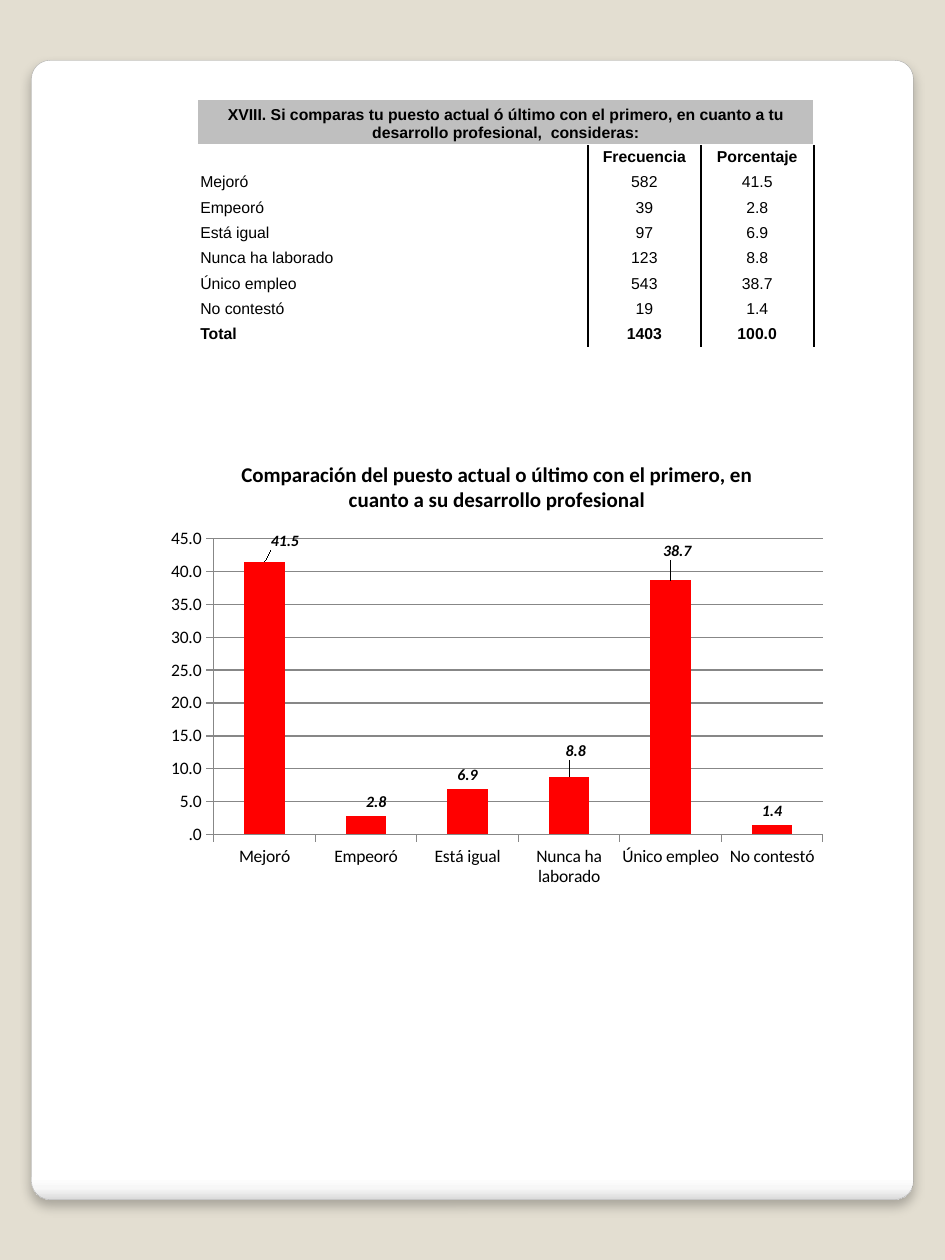
from itertools import accumulate

from lxml import etree
from pptx import Presentation
from pptx.chart.data import CategoryChartData
from pptx.dml.color import RGBColor
from pptx.enum.chart import XL_CHART_TYPE as ChartType, XL_LABEL_POSITION as LabelPos
from pptx.enum.chart import XL_TICK_MARK as Tick
from pptx.enum.shapes import MSO_CONNECTOR as Connector, MSO_SHAPE as Preset
from pptx.enum.text import MSO_ANCHOR as Anchor, PP_ALIGN as Align
from pptx.oxml import parse_xml
from pptx.oxml.ns import nsdecls, qn
from pptx.util import Pt

QUESTION = ("XVIII. Si comparas tu puesto actual ó último con el primero, en cuanto a tu\n"
            "desarrollo profesional,  consideras:")
CHART_TITLE = ("Comparación del puesto actual o último con el primero, "
               "en cuanto a su desarrollo profesional")
ANSWERS = [("Mejoró", 582, 41.5), ("Empeoró", 39, 2.8), ("Está igual", 97, 6.9),
           ("Nunca ha laborado", 123, 8.8), ("Único empleo", 543, 38.7),
           ("No contestó", 19, 1.4)]
TOTAL = ("Total", 1403, 100.0)
# Answer index -> label shift as fractions of the chart's width and height
LABEL_SHIFTS = {0: (0.03, -0.015), 1: (0.015, 0), 3: (0.01, -0.025), 4: (0.01, -0.033)}
NO_LEADER_LINES = (
    f'<c:extLst {nsdecls("c")}><c:ext uri="{{CE6537A1-D6FC-4f65-9D91-7224C49458BB}}" '
    'xmlns:c15="http://schemas.microsoft.com/office/drawing/2012/chart">'
    '<c15:showLeaderLines val="0"/></c:ext></c:extLst>')


def rgb(color):
    return RGBColor.from_string(color)


def manual_layout(inner=False, **fractions):
    """Return a c:layout element; x and y are edges when inner, else shifts."""
    layout = etree.Element(qn("c:layout"))
    manual = etree.SubElement(layout, qn("c:manualLayout"))
    if inner:
        settings = {"layoutTarget": "inner", "xMode": "edge", "yMode": "edge", **fractions}
    else:
        settings = fractions
    for tag, value in settings.items():
        etree.SubElement(manual, qn(f"c:{tag}")).set("val", str(value))
    return layout


class Page:
    ink, paper, bar, grid = "000000", "E3DED1", "FF0000", "878787"
    heading_fill = "BFBFBF"
    table_font, chart_font = "Arial", "Calibri"

    def __init__(self, slide):
        self.slide = slide
        slide.background.fill.solid()
        slide.background.fill.fore_color.rgb = rgb(self.paper)

    def style(self, font, name, size, bold=False, italic=False):
        font.name, font.size, font.bold, font.italic = name, Pt(size), bold, italic
        font.color.rgb = rgb(self.ink)

    def panel(self, left, top, width, height):
        card = self.slide.shapes.add_shape(
            Preset.ROUNDED_RECTANGLE, Pt(left), Pt(top), Pt(width), Pt(height))
        card.adjustments[0] = 0.021
        card.line.color.rgb = rgb("A4A4A4")
        card.line.width = Pt(0.16)
        stops = "".join(
            f'<a:gs pos="{percent * 1000}"><a:srgbClr val="{color}"/></a:gs>'
            for percent, color in [(0, "FFFFFF"), (98, "FFFFFF"), (99, "F7F7F7"), (100, "DADADA")])
        line = card.line._ln
        line.addprevious(parse_xml(
            f'<a:gradFill {nsdecls("a")} rotWithShape="1"><a:gsLst>{stops}</a:gsLst>'
            '<a:lin ang="5400000" scaled="0"/></a:gradFill>'))
        line.addnext(parse_xml(
            f'<a:effectLst {nsdecls("a")}><a:outerShdw blurRad="{Pt(6)}" dist="{Pt(4)}" '
            'dir="5400000" algn="t" rotWithShape="0"><a:srgbClr val="000000">'
            '<a:alpha val="25000"/></a:srgbClr></a:outerShdw></a:effectLst>'))

    def vertical_rule(self, x, top, bottom):
        rule = self.slide.shapes.add_connector(
            Connector.STRAIGHT, Pt(x), Pt(top), Pt(x), Pt(bottom))
        rule.line.color.rgb = rgb(self.ink)
        rule.line.width = Pt(1)
        etree.SubElement(rule._element.spPr, qn("a:effectLst"))

    def cell(self, cell, text, align=Align.CENTER, bold=False, fill=None, margin_top=0):
        cell.margin_left = cell.margin_right = Pt(1.5)
        cell.margin_top, cell.margin_bottom = Pt(margin_top), 0
        cell.vertical_anchor = Anchor.MIDDLE
        cell.text = text
        for paragraph in cell.text_frame.paragraphs:
            paragraph.alignment = align
            self.style(paragraph.font, self.table_font, 9, bold)
            if not text:
                etree.SubElement(paragraph._p, qn("a:endParaRPr")).set("sz", "900")
        if fill:
            cell.fill.solid()
            cell.fill.fore_color.rgb = rgb(fill)
        else:
            cell.fill.background()

    def table(self, left, top, widths, heights, heading, rows):
        frame = self.slide.shapes.add_table(
            len(heights), len(widths), Pt(left), Pt(top), Pt(sum(widths)), Pt(sum(heights)))
        table = frame.table
        table.first_row = table.horz_banding = False
        for column, width in zip(table.columns, widths):
            column.width = Pt(width)
        for row, height in zip(table.rows, heights):
            row.height = Pt(height)
        table.cell(0, 0).merge(table.cell(0, len(widths) - 1))
        self.cell(table.cell(0, 0), heading, bold=True, fill=self.heading_fill, margin_top=2)
        for r, row in enumerate(rows, 1):
            for c, value in enumerate(row):
                self.cell(table.cell(r, c), str(value), bold=r in (1, len(rows)),
                          align=Align.CENTER if c else Align.LEFT)
        for offset in accumulate(widths):
            self.vertical_rule(left + offset, top + heights[0], top + sum(heights))

    def axis(self, axis):
        axis.major_tick_mark = Tick.OUTSIDE
        axis.minor_tick_mark = Tick.NONE
        axis.format.line.color.rgb = rgb(self.grid)
        self.style(axis.tick_labels.font, self.chart_font, 10)

    def column_chart(self, left, top, width, height, title, answers, shifts):
        data = CategoryChartData(number_format="####.0")
        data.categories = [name for name, _, _ in answers]
        data.add_series(title, [percent for _, _, percent in answers])
        chart = self.slide.shapes.add_chart(
            ChartType.COLUMN_CLUSTERED, Pt(left), Pt(top), Pt(width), Pt(height), data).chart
        self.style(chart.font, self.chart_font, 10)
        chart.has_legend = False
        chart.has_title = True
        heading = chart.chart_title.text_frame
        heading.text = title
        self.style(heading.paragraphs[0].font, self.chart_font, 12, bold=True)

        values = chart.value_axis
        for axis in (chart.category_axis, values):
            self.axis(axis)
        values.minimum_scale, values.maximum_scale, values.major_unit = 0, 45, 5
        values.major_gridlines.format.line.color.rgb = rgb(self.grid)
        values.tick_labels.number_format = "####.0"
        values.tick_labels.number_format_is_linked = False

        plot = chart.plots[0]
        plot.gap_width, plot.vary_by_categories = 150, False
        series = plot.series[0]
        series.format.fill.solid()
        series.format.fill.fore_color.rgb = rgb(self.bar)
        labels = series.data_labels
        labels.show_value = True
        labels.number_format, labels.number_format_is_linked = "####.0", False
        labels.position = LabelPos.OUTSIDE_END
        self.style(labels.font, self.chart_font, 9, bold=True, italic=True)
        for index, (dx, dy) in shifts.items():
            label = series.points[index].data_label
            self.style(label.font, self.chart_font, 9, bold=True, italic=True)
            label.position = LabelPos.OUTSIDE_END
            label._dLbl.find(qn("c:idx")).addnext(manual_layout(x=dx, y=dy))
        labels._element.append(parse_xml(NO_LEADER_LINES))

        area = chart._chartSpace.chart.plotArea
        for layout in area.findall(qn("c:layout")):
            area.remove(layout)
        area.insert(0, manual_layout(inner=True, x=0.083, y=0.215, w=0.897, h=0.65))


def main():
    deck = Presentation()
    deck.slide_width, deck.slide_height = Pt(540), Pt(720)
    page = Page(deck.slides.add_slide(deck.slide_layouts[6]))
    page.panel(18, 34.5, 504, 651)
    page.column_chart(90, 252, 388, 260, CHART_TITLE, ANSWERS, LABEL_SHIFTS)
    rows = [("", "Frecuencia", "Porcentaje"), *ANSWERS, TOTAL]
    page.table(113, 56.6, [223, 64.5, 64.5], [26.3, 14] + [14.5] * 7, QUESTION, rows)
    deck.save("out.pptx")


if __name__ == "__main__":
    main()
